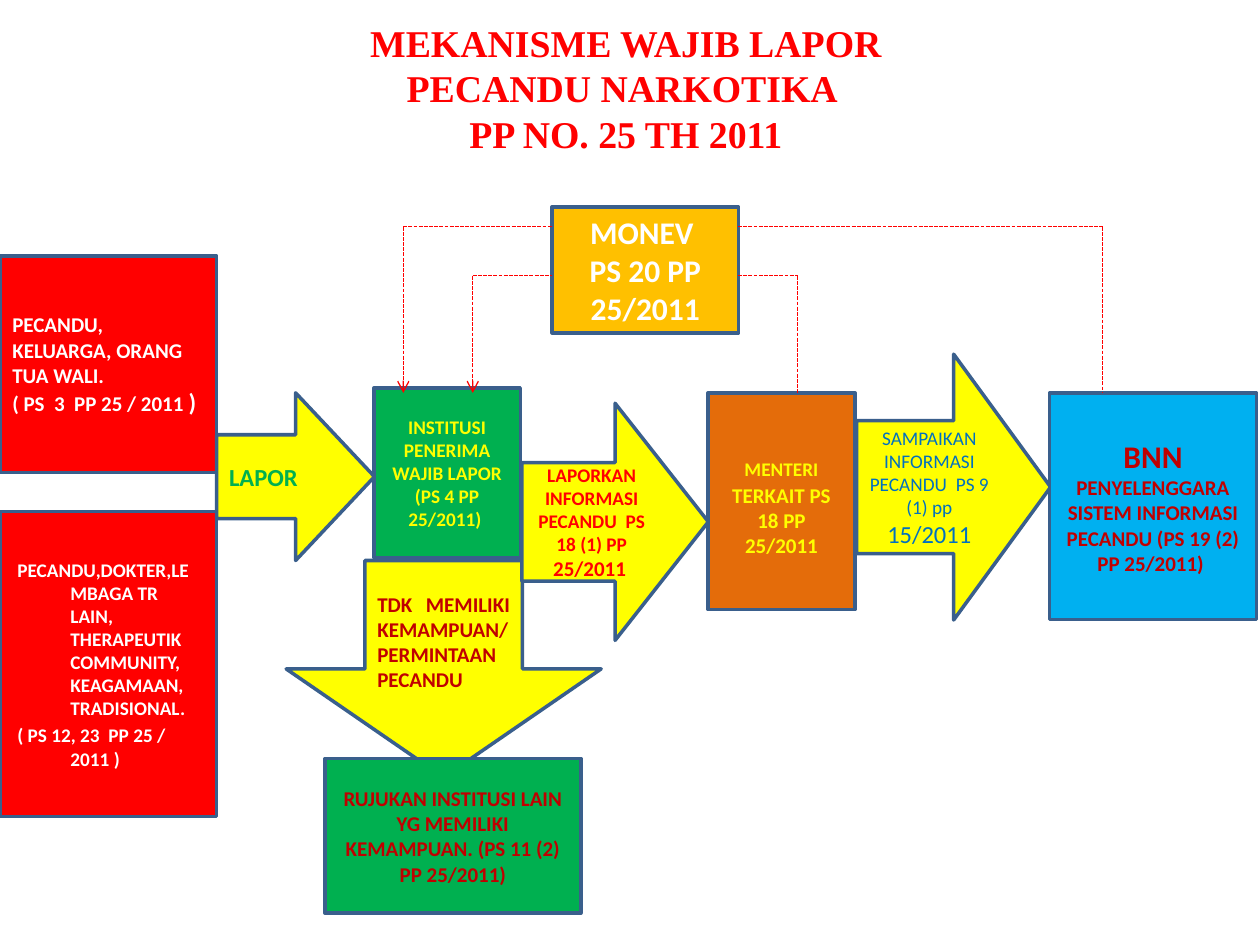
"""Build the slide on the mandatory reporting mechanism for narcotics addicts."""
from lxml import etree
from pptx import Presentation
from pptx.dml.color import RGBColor
from pptx.enum.dml import MSO_LINE
from pptx.enum.shapes import MSO_CONNECTOR, MSO_SHAPE
from pptx.enum.text import MSO_ANCHOR, PP_ALIGN
from pptx.oxml.ns import qn
from pptx.util import Cm, Pt

RED = RGBColor(0xFF, 0x00, 0x00)
DARK_RED = RGBColor(0xC0, 0x00, 0x00)
GREEN = RGBColor(0x00, 0xB0, 0x50)
YELLOW = RGBColor(0xFF, 0xFF, 0x00)
GOLD = RGBColor(0xFF, 0xC0, 0x00)
ORANGE = RGBColor(0xE4, 0x6C, 0x0A)
SKY = RGBColor(0x00, 0xB0, 0xF0)
BLUE = RGBColor(0x00, 0x70, 0xC0)
WHITE = RGBColor(0xFF, 0xFF, 0xFF)
BORDER = RGBColor(0x3A, 0x5F, 0x8C)

RECT, RIGHT, DOWN = MSO_SHAPE.RECTANGLE, MSO_SHAPE.RIGHT_ARROW, MSO_SHAPE.DOWN_ARROW
LEFT, CENTER, JUSTIFY = PP_ALIGN.LEFT, PP_ALIGN.CENTER, PP_ALIGN.JUSTIFY


def add_block(s, kind, box, fill, color, align, paragraphs):
    sp = s.shapes.add_shape(kind, *[Cm(v) for v in box])
    sp.shadow.inherit = False
    sp.fill.solid()
    sp.fill.fore_color.rgb = fill
    sp.line.color.rgb = BORDER
    sp.line.width = Pt(2)
    tf = sp.text_frame
    tf.word_wrap = True
    tf.vertical_anchor = MSO_ANCHOR.MIDDLE
    for i, runs in enumerate(paragraphs):
        p = tf.add_paragraph() if i else tf.paragraphs[0]
        p.alignment = align
        for text, size in runs:
            r = p.add_run()
            r.text = text
            r.font.name = "Calibri"
            r.font.size = Pt(size)
            r.font.bold = color != BLUE
            r.font.color.rgb = color
    return sp


def add_dashed(s, x1, y1, x2, y2, arrow=False):
    c = s.shapes.add_connector(MSO_CONNECTOR.STRAIGHT, Cm(x1), Cm(y1), Cm(x2), Cm(y2))
    c.line.color.rgb = RED
    c.line.width = Pt(0.75)
    c.line.dash_style = MSO_LINE.SQUARE_DOT
    sp_pr = c.element.spPr
    if arrow:
        etree.SubElement(sp_pr.find(qn("a:ln")), qn("a:tailEnd"), type="arrow")
    etree.SubElement(sp_pr, qn("a:effectLst"))


prs = Presentation()
prs.slide_width, prs.slide_height = Cm(25.4), Cm(19.05)
s = prs.slides.add_slide(prs.slide_layouts[6])

title = s.shapes.add_textbox(Cm(1.19), Cm(0.18), Cm(22.86), Cm(3.18))
tf = title.text_frame
tf.word_wrap = True
tf.vertical_anchor = MSO_ANCHOR.MIDDLE
p = tf.paragraphs[0]
p.text = "MEKANISME WAJIB LAPOR\vPECANDU NARKOTIKA \vPP NO. 25 TH 2011"
p.alignment = CENTER
p.line_spacing = Pt(26)
for r in p.runs:
    r.font.name = "Times New Roman"
    r.font.size = Pt(21.6)
    r.font.bold = True
    r.font.color.rgb = RED

helpers = add_block(s, RECT, (0, 10.31, 4.37, 6.15), RED, WHITE, LEFT, [
    [("PECANDU,DOKTER,LEMBAGA TR LAIN, THERAPEUTIK COMMUNITY, KEAGAMAAN, TRADISIONAL.", 11)],
    [("( PS 12, 23  PP 25 / 2011 )", 11)],
])
for p in helpers.text_frame.paragraphs:
    p.space_before = Pt(2.2)
    pPr = p._p.get_or_add_pPr()
    pPr.set("marL", str(Cm(1.17)))
    pPr.set("indent", str(Cm(-1.07)))

blocks = [
    (RECT, (0, 5.16, 4.37, 4.37), RED, WHITE, LEFT,
     [[("PECANDU, KELUARGA, ORANG TUA WALI.", 12)],
      [("( PS  3  PP 25 / 2011 ", 12), (")", 14)]]),
    (RIGHT, (4.37, 7.92, 3.18, 3.38), YELLOW, GREEN, LEFT, [[("LAPOR", 14)]]),
    (RECT, (7.54, 7.82, 2.95, 3.43), GREEN, YELLOW, CENTER,
     [[("INSTITUSI PENERIMA WAJIB LAPOR (PS 4 PP 25/2011) ", 11)]]),
    (DOWN, (5.77, 11.3, 6.35, 4.37), YELLOW, DARK_RED, JUSTIFY,
     [[("TDK MEMILIKI KEMAMPUAN/PERMINTAAN PECANDU", 12)]]),
    (RECT, (6.55, 15.29, 5.16, 3.12), GREEN, DARK_RED, CENTER,
     [[("RUJUKAN INSTITUSI LAIN YG MEMILIKI KEMAMPUAN. (PS 11 (2) PP 25/2011)", 12)]]),
    (RIGHT, (10.52, 8.13, 3.76, 4.78), YELLOW, RED, CENTER,
     [[("LAPORKAN INFORMASI PECANDU  PS 18 (1) PP ", 11), ("25/2011", 12), (" ", 11)]]),
    (RECT, (14.27, 7.92, 2.97, 4.37), ORANGE, YELLOW, CENTER,
     [[("MENTERI", 11), (" ", 18), ("TERKAIT PS 18 PP 25/2011", 12)]]),
    (RIGHT, (17.27, 7.14, 3.91, 5.36), YELLOW, BLUE, CENTER,
     [[("SAMPAIKAN INFORMASI PECANDU  PS 9 (1) pp ", 11), ("15/2011", 14)]]),
    (RECT, (11.13, 4.17, 3.76, 2.54), GOLD, WHITE, CENTER,
     [[("MONEV ", 18)], [("PS 20 PP 25/2011", 18)]]),
    (RECT, (21.16, 7.92, 4.17, 4.57), SKY, DARK_RED, CENTER,
     [[("BNN ", 18), ("PENYELENGGARA SISTEM INFORMASI PECANDU (PS 19 (2) PP 25/2011) ", 12)]]),
]
for block in blocks:
    add_block(s, *block)

monev_left, monev_right, bottom = 11.13, 14.88, 7.92
for y, x_left, x_right in [(4.57, 8.13, 22.23), (5.56, 9.53, 16.08)]:
    add_dashed(s, monev_right, y, x_right, y)
    add_dashed(s, x_left, y, monev_left, y)
    add_dashed(s, x_left, y, x_left, bottom, arrow=True)
    add_dashed(s, x_right, y, x_right, bottom)

prs.save("out.pptx")
